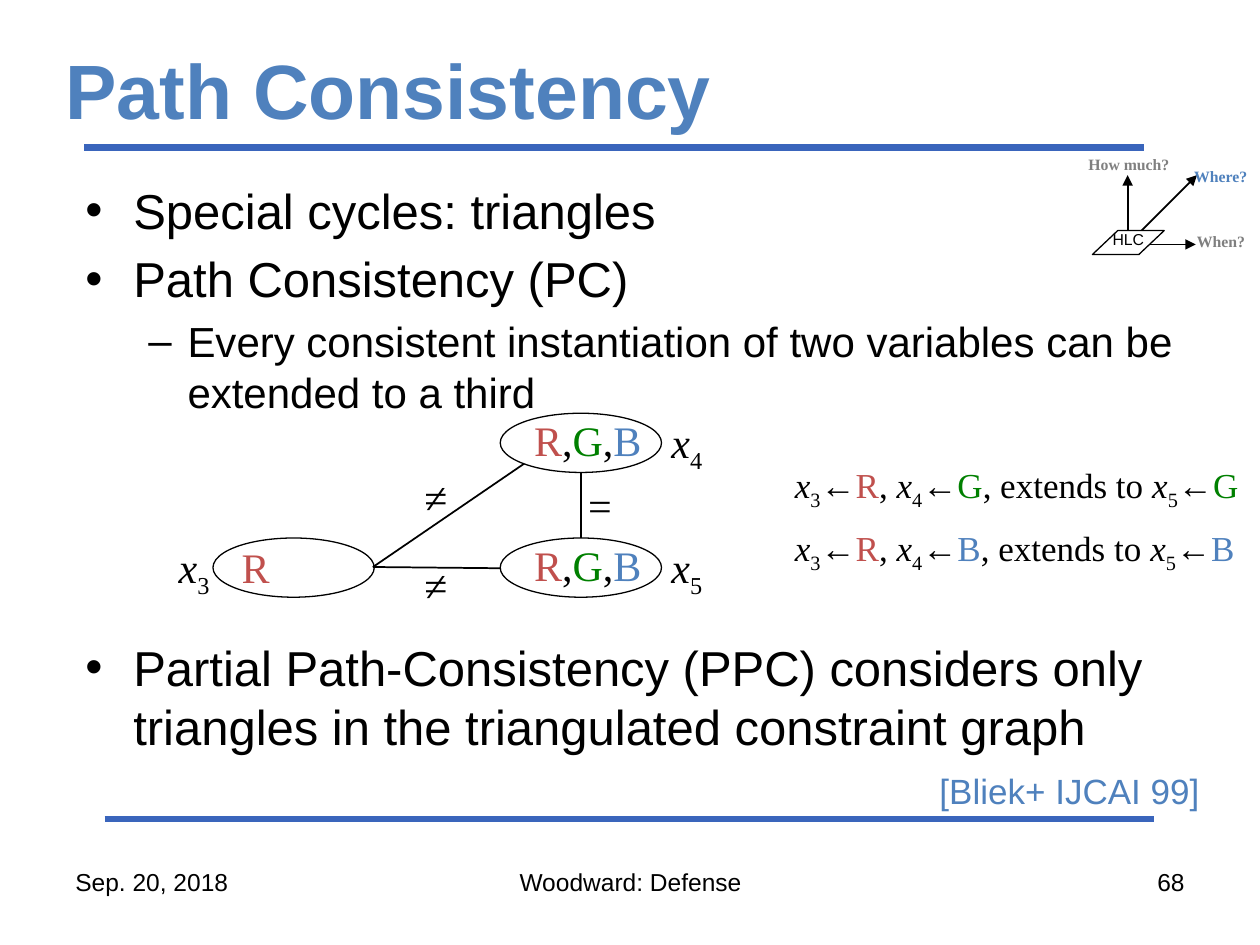
"""Build the Path Consistency slide."""
import pptx
import pptx.dml.color
import pptx.enum.shapes
import pptx.enum.text
import pptx.oxml.ns
import pptx.util
from lxml import etree

Inches = pptx.util.Inches
Pt = pptx.util.Pt
ALIGN = pptx.enum.text.PP_ALIGN
ANCHOR = pptx.enum.text.MSO_ANCHOR
SHAPES = pptx.enum.shapes.MSO_SHAPE
COLORS = {
    "black": "000000", "white": "FFFFFF", "rule": "3A65BC", "blue": "4F81BD",
    "red": "C0504D", "green": "008000", "gray": "808080", "dark gray": "7F7F7F",
}
SERIF = "Times New Roman"
VALUES = {"R": "red", "G": "green", "B": "blue"}


def rgb(name):
    return pptx.dml.color.RGBColor.from_string(COLORS[name])


def add_element(parent, tag, **attributes):
    return etree.SubElement(parent, pptx.oxml.ns.qn(tag), attributes)


def write(paragraph, text, size=24, font="Arial", color="black", bold=False,
          italic=False, baseline=None):
    run = paragraph.add_run()
    run.text = text
    run.font.size = Pt(size)
    run.font.name = font
    run.font.bold = bold
    run.font.italic = italic
    run.font.color.rgb = rgb(color)
    if baseline:
        run.font._element.set("baseline", str(baseline))


def write_variable(paragraph, index, size=24):
    write(paragraph, "x", size=size, font=SERIF, italic=True)
    write(paragraph, index, size=size, font=SERIF, baseline=-25000)


def write_values(paragraph, text, size=24):
    for letter in text:
        write(paragraph, letter, size=size, font=SERIF, color=VALUES.get(letter, "black"))


def add_box(slide, left, top, width, height, wrap=True, anchor=ANCHOR.TOP, align=ALIGN.LEFT):
    shape = slide.shapes.add_textbox(Inches(left), Inches(top), Inches(width), Inches(height))
    frame = shape.text_frame
    frame.word_wrap = wrap
    frame.vertical_anchor = anchor
    if not wrap:
        frame.auto_size = pptx.enum.text.MSO_AUTO_SIZE.SHAPE_TO_FIT_TEXT
    frame.paragraphs[0].alignment = align
    return frame


def add_label(slide, left, top, width, height, text, **style):
    frame = add_box(slide, left, top, width, height, wrap=False)
    write(frame.paragraphs[0], text, font=SERIF, **style)


def set_bullet(paragraph, character, margin, hanging, size, tab=None):
    paragraph.space_before = Pt(size * 0.2)
    properties = paragraph._p.get_or_add_pPr()
    properties.set("marL", str(Inches(margin)))
    properties.set("indent", str(-Inches(hanging)))
    color = add_element(properties, "a:buClr")
    add_element(color, "a:srgbClr", val=COLORS["black"])
    add_element(properties, "a:buFont", typeface="Arial")
    add_element(properties, "a:buChar", char=character)
    if tab:
        tabs = add_element(properties, "a:tabLst")
        add_element(tabs, "a:tab", pos=str(Inches(tab)), algn="r")


def add_line(slide, start, end, color="black", width=1, arrow=False):
    line = slide.shapes.add_connector(
        pptx.enum.shapes.MSO_CONNECTOR.STRAIGHT, *map(Inches, start + end))
    line.line.color.rgb = rgb(color)
    line.line.width = Pt(width)
    if arrow:
        add_element(line.line._get_or_add_ln(), "a:tailEnd", type="triangle")
    add_element(line._element.spPr, "a:effectLst")


def add_outline(slide, kind, left, top, width, height, fill=None):
    shape = slide.shapes.add_shape(
        kind, Inches(left), Inches(top), Inches(width), Inches(height))
    shape.shadow.inherit = False
    if fill:
        shape.fill.solid()
        shape.fill.fore_color.rgb = rgb(fill)
    else:
        shape.fill.background()
    shape.line.color.rgb = rgb("black")
    shape.line.width = Pt(0.75)
    return shape


def add_frame(slide):
    add_line(slide, (0.83, 6.5), (9.16, 6.5), color="rule", width=4)
    add_line(slide, (0.67, 1.17), (9.08, 1.17), color="rule", width=4)
    title = add_box(slide, 0.42, 0.33, 9, 0.75, anchor=ANCHOR.MIDDLE)
    write(title.paragraphs[0], "Path Consistency", size=44, color="blue", bold=True)
    for left, width, align, text in (
            (0.5, 2.33, ALIGN.LEFT, "Sep. 20, 2018"),
            (3.42, 3.17, ALIGN.CENTER, "Woodward: Defense"),
            (7.17, 2.33, ALIGN.RIGHT, "68")):
        footer = add_box(slide, left, 6.83, width, 0.52, align=align)
        write(footer.paragraphs[0], text, size=14)


def add_body(slide):
    frame = add_box(slide, 0.58, 1.38, 8.92, 2.65)
    items = (
        ("Special cycles: triangles", "•", 0.38, 0.38, 28),
        ("Path Consistency (PC)", "•", 0.38, 0.38, 28),
        ("Every consistent instantiation of two variables can be extended to a third",
         "–", 0.81, 0.31, 24),
    )
    for number, (text, character, margin, hanging, size) in enumerate(items):
        paragraph = frame.add_paragraph() if number else frame.paragraphs[0]
        set_bullet(paragraph, character, margin, hanging, size)
        write(paragraph, text, size=size)

    paragraph = add_box(slide, 0.58, 5.01, 9.42, 1.39).paragraphs[0]
    set_bullet(paragraph, "•", 0.38, 0.38, 28, tab=9.11)
    write(paragraph, "Partial Path-Consistency (PPC) considers only triangles "
          "in the triangulated constraint graph ", size=28)
    paragraph.add_line_break()
    write(paragraph, "\t", size=28)
    write(paragraph, "[Bliek+ IJCAI 99]", size=20, color="blue")


def add_axes(slide):
    for end in ((9.49, 1.94), (8.95, 1.39), (9.5, 1.39)):
        add_line(slide, (8.95, 1.94), end, arrow=True)
    for left, top, width, text, color in (
            (9.38, 1.27, 0.66, "Where?", "blue"),
            (9.4, 1.79, 0.62, "When?", "dark gray"),
            (8.54, 1.18, 0.86, "How much?", "gray")):
        add_label(slide, left, top, width, 0.25, text, size=9, color=color, bold=True)
    plane = add_outline(slide, SHAPES.PARALLELOGRAM, 8.67, 1.83, 0.57, 0.19, fill="white")
    plane.adjustments[0] = 1.06
    frame = plane.text_frame
    frame.margin_left = frame.margin_top = frame.margin_right = 0
    frame.margin_bottom = Inches(0.05)
    frame.vertical_anchor = ANCHOR.MIDDLE
    frame.paragraphs[0].alignment = ALIGN.CENTER
    write(frame.paragraphs[0], "HLC", size=9)


def add_node(slide, left, top, index, index_left, values, values_box):
    add_outline(slide, SHAPES.OVAL, left, top, 1.28, 0.47)
    name = add_box(slide, index_left, top - 0.02, 0.51, 0.51, wrap=False)
    write_variable(name.paragraphs[0], index)
    domain = add_box(slide, *values_box, 0.5, wrap=False)
    write_values(domain.paragraphs[0], values)


def add_graph(slide):
    add_node(slide, 1.69, 4.27, "3", 1.32, "R", (1.82, 4.25, 0.43))
    for top, index in ((3.28, "4"), (4.27, "5")):
        add_node(slide, 3.97, top, index, 5.23, "R,G,B", (4.14, top - 0.04, 1.06))
    add_line(slide, (2.96, 4.5), (4.16, 3.68))
    add_line(slide, (2.96, 4.5), (3.97, 4.51))
    add_line(slide, (4.61, 4.27), (4.61, 3.75))
    for left, top, sign in ((3.27, 3.69, "≠"), (3.27, 4.39, "≠"), (4.57, 3.76, "=")):
        add_label(slide, left, top, 0.39, 0.51, sign)


def add_extension(slide, top, value):
    paragraph = add_box(slide, 6.21, top, 3.79, 0.47).paragraphs[0]
    paragraph.space_before = Pt(4)
    for lead, index, assigned in (("", "3", "R"), (", ", "4", value),
                                  (", extends to ", "5", value)):
        if lead:
            write(paragraph, lead, size=20, font=SERIF)
        write_variable(paragraph, index, size=20)
        write(paragraph, "←", size=20, font=SERIF)
        write_values(paragraph, assigned, size=20)


def main():
    presentation = pptx.Presentation()
    presentation.slide_width = Inches(10)
    presentation.slide_height = Inches(7.5)
    slide = presentation.slides.add_slide(presentation.slide_layouts[6])
    add_frame(slide)
    add_body(slide)
    add_axes(slide)
    add_graph(slide)
    add_extension(slide, 3.63, "G")
    add_extension(slide, 4.13, "B")
    presentation.save("out.pptx")


if __name__ == "__main__":
    main()
